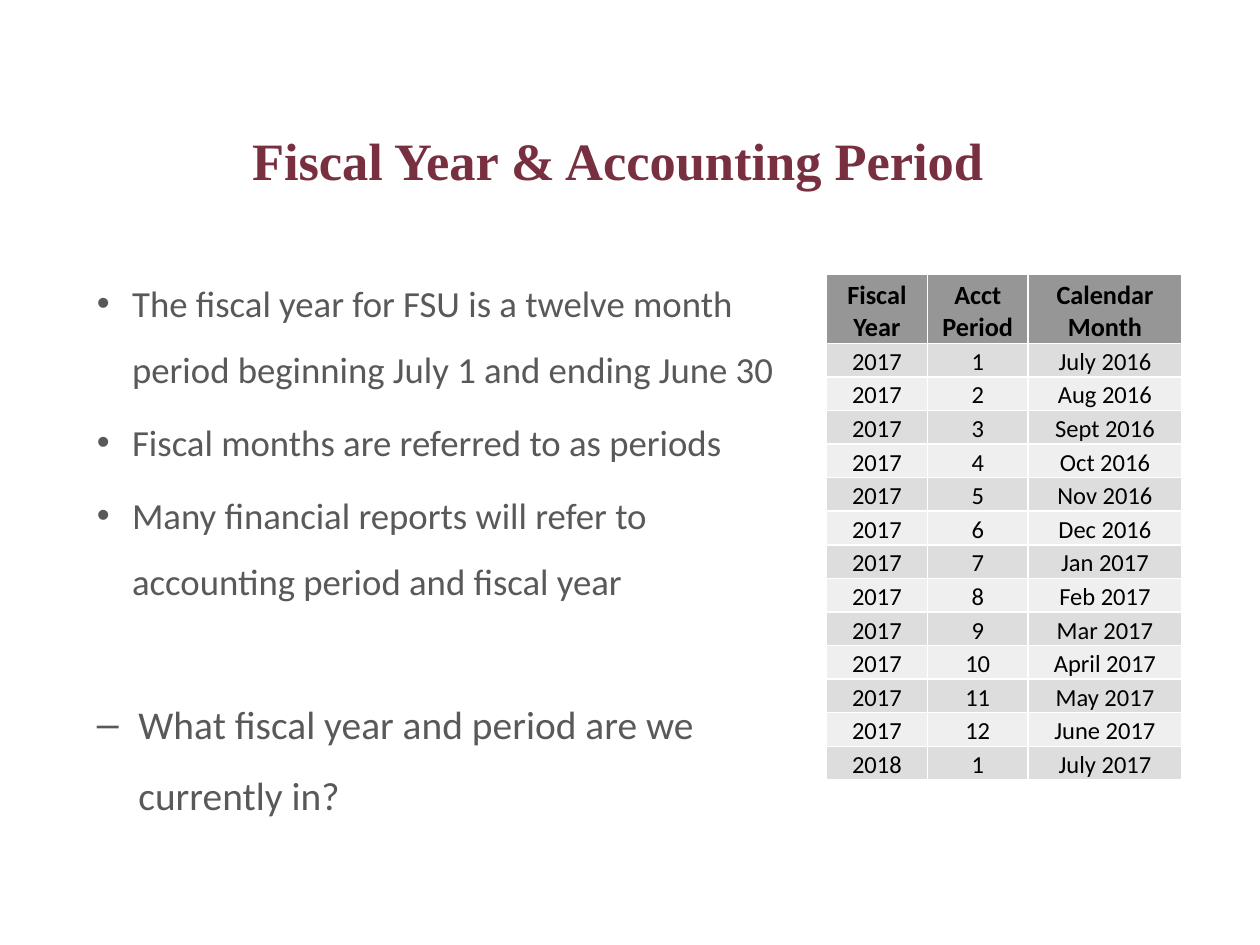
"""Build the slide on fiscal years and accounting periods."""
from lxml import etree
from pptx import Presentation
from pptx.dml.color import RGBColor
from pptx.enum.text import MSO_ANCHOR, PP_ALIGN
from pptx.oxml.ns import qn
from pptx.util import Inches, Pt

BOTTOM, TOP, CENTER = MSO_ANCHOR.BOTTOM, MSO_ANCHOR.TOP, PP_ALIGN.CENTER
WIDE, HIGH = 10, 7.5
COLORS = {"title": "782F40", "body": "595959", "cell": "000000",
          "head": "969696", "odd": "DDDDDD", "even": "EFEFEF", "rule": "FFFFFF"}

TITLE = "Fiscal Year & Accounting Period"
POINTS = [
    ("•", 21, 0.28, 0, "The fiscal year for FSU is a twelve month period beginning July 1 and ending June 30"),
    ("•", 21, 0.28, 4, "Fiscal months are referred to as periods"),
    ("•", 21, 0.28, 4, "Many financial reports will refer to accounting period and fiscal year"),
    ("–", 22.5, 0.33, 42, "What fiscal year and period are we currently in?"),
]
HEADS = ("Fiscal Year", "Acct Period", "Calendar Month")
MONTHS = ("July 2016", "Aug 2016", "Sept 2016", "Oct 2016", "Nov 2016",
          "Dec 2016", "Jan 2017", "Feb 2017", "Mar 2017", "April 2017",
          "May 2017", "June 2017", "July 2017")
ROWS = [HEADS] + [(str(2017 + i // 12), str(i % 12 + 1), month)
                  for i, month in enumerate(MONTHS)]

TITLE_BOX = (0.17, 0.128, 0.772, 0.081)
BODY_BOX = (0.067, 0.267, 0.562, 0.711)
GRID_BOX = (0.656, 0.29, 0.282, 0.536)
COLS = (0.8, 0.8, 1.22)
HEAD_HIGH = 0.55


def place(box):
    return [Inches(part * size) for part, size in zip(box, (WIDE, HIGH) * 2)]


def style(font, name, size, color, bold=False):
    for key, value in {"name": name, "size": Pt(size), "bold": bold}.items():
        setattr(font, key, value)
    font.color.rgb = RGBColor.from_string(COLORS[color])


def add_text(slide, box, anchor, side):
    frame = slide.shapes.add_textbox(*place(box)).text_frame
    looks = {"word_wrap": True, "vertical_anchor": anchor,
             "margin_left": Inches(side), "margin_right": Inches(side)}
    for key, value in looks.items():
        setattr(frame, key, value)
    return frame


def add_title(slide):
    para = add_text(slide, TITLE_BOX, BOTTOM, 0.3).paragraphs[0]
    para.text = TITLE
    style(para.font, "Times New Roman", 30, "title", True)


def add_points(slide):
    frame = add_text(slide, BODY_BOX, TOP, 0.1)
    for i, (mark, size, indent, gap, text) in enumerate(POINTS):
        para = frame.add_paragraph() if i else frame.paragraphs[0]
        para.text = text
        props = para._p.get_or_add_pPr()
        props.set("marL", str(Inches(indent)))
        props.set("indent", str(-Inches(indent)))
        para.line_spacing, para.space_before = 1.5, Pt(gap)
        etree.SubElement(props, qn("a:buFont"), typeface="Arial")
        etree.SubElement(props, qn("a:buChar"), char=mark)
        style(para.runs[0].font, "Calibri", size, "body")


def add_rules(cell):
    props = cell._tc.get_or_add_tcPr()
    for side in "LRTB":
        line = etree.SubElement(props, qn("a:ln" + side), w=str(Pt(1)))
        fill = etree.SubElement(line, qn("a:solidFill"))
        etree.SubElement(fill, qn("a:srgbClr"), val=COLORS["rule"])


def fill_cell(cell, text, row):
    looks = {"margin_left": 0, "margin_right": 0, "margin_top": 0,
             "margin_bottom": 0, "vertical_anchor": BOTTOM, "text": text}
    for key, value in looks.items():
        setattr(cell, key, value)
    add_rules(cell)
    tone = "head" if row == 0 else "odd" if row % 2 else "even"
    cell.fill.solid()
    cell.fill.fore_color.rgb = RGBColor.from_string(COLORS[tone])
    para = cell.text_frame.paragraphs[0]
    para.alignment = CENTER
    style(para.runs[0].font, "Calibri", 14 if row else 15, "cell", row == 0)


def add_grid(slide):
    table = slide.shapes.add_table(len(ROWS), len(COLS), *place(GRID_BOX)).table
    table.horz_banding = False
    for col, width in zip(table.columns, COLS):
        col.width = Inches(width)
    step = (GRID_BOX[3] * HIGH - HEAD_HIGH) / len(MONTHS)
    for r, texts in enumerate(ROWS):
        table.rows[r].height = Inches(step if r else HEAD_HIGH)
        for c, text in enumerate(texts):
            fill_cell(table.cell(r, c), text, r)


def main():
    deck = Presentation()
    deck.slide_width, deck.slide_height = Inches(WIDE), Inches(HIGH)
    slide = deck.slides.add_slide(deck.slide_layouts[6])
    add_title(slide)
    add_points(slide)
    add_grid(slide)
    deck.save("out.pptx")


if __name__ == "__main__":
    main()
